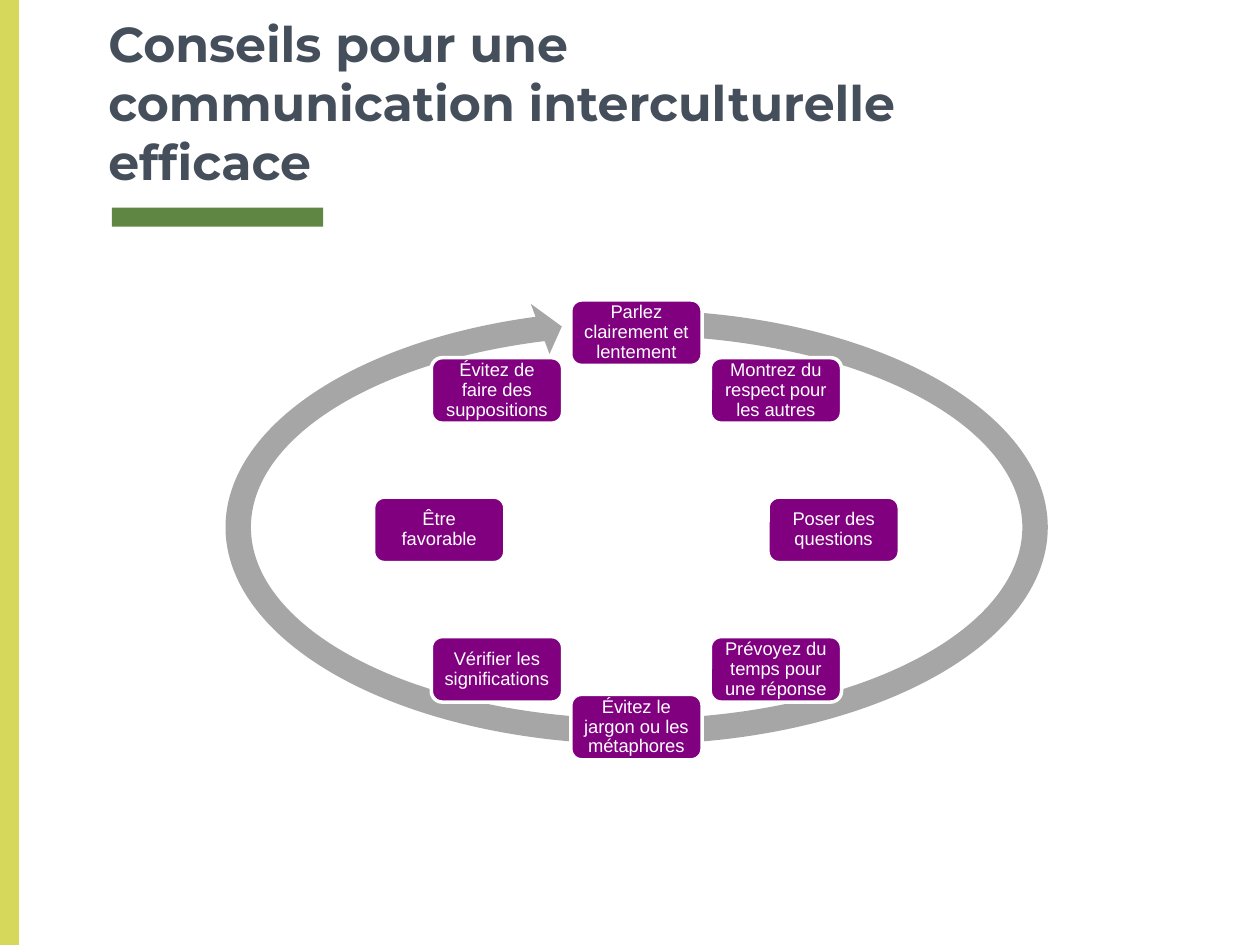
from math import cos, radians, sin

from pptx import Presentation
from pptx.dml.color import RGBColor
from pptx.enum.shapes import MSO_SHAPE
from pptx.enum.text import MSO_ANCHOR, MSO_AUTO_SIZE, PP_ALIGN
from pptx.util import Pt

COLORS = {
    "title": "454F5B",
    "accent": "608643",
    "band": "D5D85A",
    "arrow": "A6A6A6",
    "box": "800080",
    "white": "FFFFFF",
}
TIPS = [
    "Parlez clairement et lentement",
    "Montrez du respect pour les autres",
    "Poser des questions",
    "Prévoyez du temps pour une réponse",
    "Évitez le jargon ou les métaphores",
    "Vérifier les significations",
    "Être favorable",
    "Évitez de faire des suppositions",
]
CENTER_X, CENTER_Y, RADIUS = 363.7, 302.8, 112.7
BOX_WIDTH, BOX_HEIGHT = 75, 37.4


def color(name):
    return RGBColor.from_string(COLORS[name])


def set_insets(frame, inset):
    frame.margin_left = frame.margin_right = Pt(inset)
    frame.margin_top = frame.margin_bottom = Pt(inset)


def style_font(font, name, size, color_name, bold=False):
    font.name = name
    font.size = Pt(size)
    font.bold = bold
    font.color.rgb = color(color_name)


def add_filled_shape(slide, kind, left, top, width, height, fill):
    shape = slide.shapes.add_shape(kind, Pt(left), Pt(top), Pt(width), Pt(height))
    shape.shadow.inherit = False
    shape.fill.solid()
    shape.fill.fore_color.rgb = color(fill)
    shape.line.fill.background()
    return shape


def set_title(slide, text):
    title = slide.shapes.title
    title.left, title.top = Pt(54.7), Pt(14.4)
    title.width, title.height = Pt(611.3), Pt(101.5)
    frame = title.text_frame
    frame.text = text
    frame.word_wrap = True
    frame.auto_size = MSO_AUTO_SIZE.NONE
    frame.vertical_anchor = MSO_ANCHOR.BOTTOM
    set_insets(frame, 7.2)
    para = frame.paragraphs[0]
    para.alignment = PP_ALIGN.LEFT
    style_font(para.font, "Montserrat", 28, "title", bold=True)


def add_cycle_arrow(slide):
    arrow = add_filled_shape(
        slide, MSO_SHAPE.CIRCULAR_ARROW, 120.8, 169.2, 486, 264.2, "arrow"
    )
    for index, value in enumerate([0.055, 3.307, 146.423, 168.782, 0.058]):
        arrow.adjustments[index] = value


def add_tip(slide, text, angle):
    left = CENTER_X + RADIUS * sin(angle) - BOX_WIDTH / 2
    top = CENTER_Y - RADIUS * cos(angle) - BOX_HEIGHT / 2
    box = add_filled_shape(
        slide, MSO_SHAPE.ROUNDED_RECTANGLE, left, top, BOX_WIDTH, BOX_HEIGHT, "box"
    )
    box.line.color.rgb = color("white")
    box.line.width = Pt(2)
    frame = box.text_frame
    frame.text = text
    frame.word_wrap = True
    frame.vertical_anchor = MSO_ANCHOR.MIDDLE
    set_insets(frame, 3.6)
    para = frame.paragraphs[0]
    para.alignment = PP_ALIGN.CENTER
    para.line_spacing = 0.9
    style_font(para.font, "Arial", 10.5, "white")


def main():
    deck = Presentation()
    deck.slide_width, deck.slide_height = Pt(720), Pt(540)
    slide = deck.slides.add_slide(deck.slide_layouts[5])
    add_filled_shape(slide, MSO_SHAPE.RECTANGLE, 64, 118.7, 120.7, 10.8, "accent")
    add_filled_shape(slide, MSO_SHAPE.RECTANGLE, 0, 0, 10.8, 540, "band")
    set_title(slide, "Conseils pour une\vcommunication interculturelle\vefficace")
    add_cycle_arrow(slide)
    for index, tip in enumerate(TIPS):
        add_tip(slide, tip, radians(index * 360 / len(TIPS)))
    deck.save("out.pptx")


if __name__ == "__main__":
    main()
